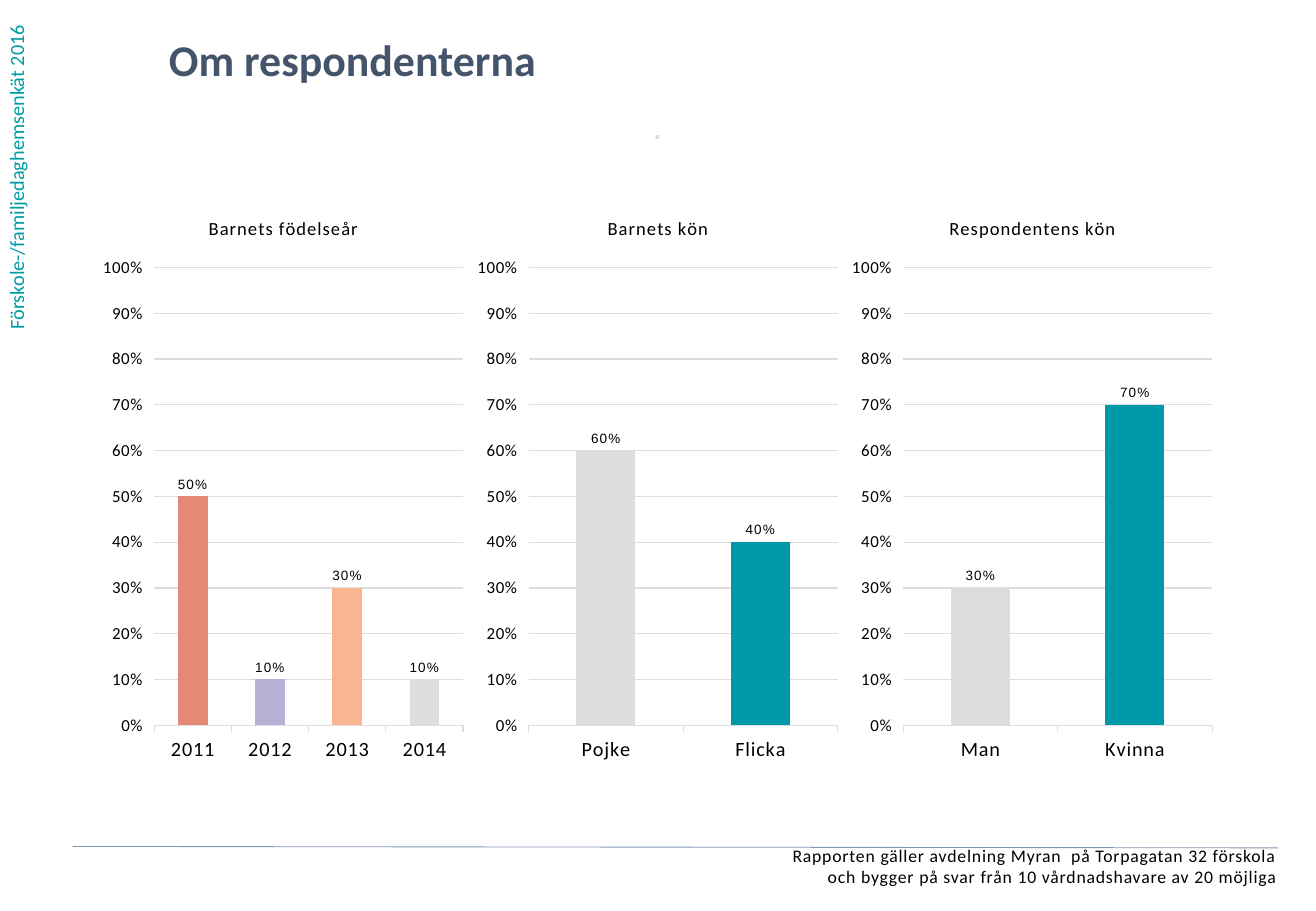
import pptx
import pptx.chart.data
import pptx.dml.color
import pptx.enum.chart
import pptx.enum.shapes
import pptx.enum.text
import pptx.oxml
import pptx.util
from lxml import etree

Cm = pptx.util.Cm
Pt = pptx.util.Pt
RGBColor = pptx.dml.color.RGBColor
Align = pptx.enum.text.PP_ALIGN

TEAL = RGBColor(0x00, 0x99, 0xAA)
SIDE_TEAL = RGBColor(0x00, 0x9B, 0xA4)
SLATE = RGBColor(0x44, 0x54, 0x6A)
RULE_BLUE = RGBColor(0x84, 0x97, 0xB0)
PALE_BLUE = RGBColor(0xD2, 0xD9, 0xE2)
GREY = RGBColor(0xDD, 0xDD, 0xDD)
PEACH = RGBColor(0xF9, 0xB5, 0x90)
LILAC = RGBColor(0xB6, 0xB1, 0xD4)
CORAL = RGBColor(0xE5, 0x89, 0x77)
BLACK = RGBColor(0, 0, 0)
FONT = "Calibri"
LETTER_SPACING = "50"  # hundredths of a point

# Content
TITLE = "Om respondenterna"
SIDE_LABEL = "Förskole-/familjedaghemsenkät 2016"
SEPARATOR = "⋅"
FOOTER = ("Rapporten gäller avdelning Myran  på Torpagatan 32 förskola\v"
          "och bygger på svar från 10 vårdnadshavare av 20 möjliga")
# Chart title, then category, share and colour; the axis runs right to left
CHARTS = [
    ("Barnets födelseår", [("2014", 0.1, GREY), ("2013", 0.3, PEACH),
                           ("2012", 0.1, LILAC), ("2011", 0.5, CORAL)]),
    ("Barnets kön", [("Flicka", 0.4, TEAL), ("Pojke", 0.6, GREY)]),
    ("Respondentens kön", [("Kvinna", 0.7, TEAL), ("Man", 0.3, GREY)]),
]
CHART_LEFT, CHART_TOP, CHART_WIDTH, CHART_HEIGHT = 2.01, 4.06, 7.83, 12.09
PLOT_AREA = {"x": 0.155, "y": 0.127, "w": 0.825, "h": 0.792}
PERCENT = "0%;0%"


def style_font(font, size, color, name=FONT, bold=False):
    font.size, font.name, font.bold = Pt(size), name, bold
    font.color.rgb = color


def fill_text(shape, text, size, color, bold=False, align=Align.LEFT,
              spaced=False, margins=(0, 0)):
    frame = shape.text_frame
    frame.word_wrap = True
    frame.auto_size = pptx.enum.text.MSO_AUTO_SIZE.NONE
    frame.vertical_anchor = pptx.enum.text.MSO_ANCHOR.TOP
    frame.margin_left = frame.margin_right = Cm(margins[0])
    frame.margin_top = frame.margin_bottom = Cm(margins[1])
    frame.text = text
    paragraph = frame.paragraphs[0]
    paragraph.alignment = align
    style_font(paragraph.font, size, color, bold=bold)
    if spaced:
        for run in paragraph.runs:
            run._r.get_or_add_rPr().set("spc", LETTER_SPACING)
    return frame


def add_text(slide, box, *args, **kwargs):
    shape = slide.shapes.add_textbox(*(Cm(length) for length in box))
    return fill_text(shape, *args, **kwargs)


def fix_plot_area(chart):
    qn = pptx.oxml.ns.qn
    plot_area = chart._chartSpace.chart.plotArea
    for old_layout in plot_area.findall(qn("c:layout")):
        plot_area.remove(old_layout)
    layout = etree.Element(qn("c:layout"))
    manual = etree.SubElement(layout, qn("c:manualLayout"))
    settings = {"layoutTarget": "inner", "xMode": "edge", "yMode": "edge", **PLOT_AREA}
    for tag, value in settings.items():
        etree.SubElement(manual, qn("c:" + tag)).set("val", str(value))
    plot_area.insert(0, layout)


def add_share_chart(slide, left, title, bars):
    data = pptx.chart.data.CategoryChartData(number_format=PERCENT)
    data.categories = [category for category, _, _ in bars]
    data.add_series("Series 1", [share for _, share, _ in bars])
    chart = slide.shapes.add_chart(
        pptx.enum.chart.XL_CHART_TYPE.COLUMN_CLUSTERED,
        Cm(left), Cm(CHART_TOP), Cm(CHART_WIDTH), Cm(CHART_HEIGHT), data).chart
    chart.has_legend = False
    style_font(chart.font, 10, BLACK)
    chart.has_title = True
    chart.chart_title.include_in_layout = False
    title_frame = chart.chart_title.text_frame
    title_frame.text = title
    style_font(title_frame.paragraphs[0].font, 11, BLACK)
    title_frame.paragraphs[0].runs[0]._r.get_or_add_rPr().set("spc", LETTER_SPACING)

    # Axes; the high end of the reversed category axis is on the left
    category_axis, value_axis = chart.category_axis, chart.value_axis
    category_axis.reverse_order = True
    value_axis.tick_label_position = pptx.enum.chart.XL_TICK_LABEL_POSITION.HIGH
    style_font(category_axis.tick_labels.font, 12, BLACK)
    style_font(value_axis.tick_labels.font, 10, BLACK)
    value_axis.minimum_scale, value_axis.maximum_scale = 0, 1
    value_axis.major_unit = 0.1
    value_axis.tick_labels.number_format = PERCENT
    value_axis.tick_labels.number_format_is_linked = False
    value_axis.format.line.fill.background()
    for line in (category_axis.format.line, value_axis.major_gridlines.format.line):
        line.color.rgb, line.width = GREY, Pt(0.75)

    # Bars and labels
    plot = chart.plots[0]
    plot.gap_width = 162
    plot.vary_by_categories = False
    series = plot.series[0]
    series.format.fill.solid()
    series.format.fill.fore_color.rgb = TEAL
    for index, (_, _, color) in enumerate(bars):
        fill = series.points[index].format.fill
        fill.solid()
        fill.fore_color.rgb = color
    labels = series.data_labels
    labels.show_value = True
    labels.number_format, labels.number_format_is_linked = PERCENT, False
    labels.position = pptx.enum.chart.XL_LABEL_POSITION.OUTSIDE_END
    style_font(labels.font, 8, BLACK, name="Arial")

    for properties in chart._chartSpace.iter(pptx.oxml.ns.qn("a:defRPr")):
        properties.set("spc", LETTER_SPACING)
    fix_plot_area(chart)


def main():
    presentation = pptx.Presentation()
    presentation.slide_width, presentation.slide_height = Cm(27.51), Cm(19.05)
    slide = presentation.slides.add_slide(presentation.slide_layouts[5])

    # Title and side label
    title = slide.shapes.title
    title.left, title.top, title.width, title.height = Cm(3.53), Cm(0.69), Cm(21.18), Cm(1.45)
    fill_text(title, TITLE, 26, SLATE, bold=True)
    side = add_text(slide, (-0.05, 0, 1.02, 7.14), SIDE_LABEL, 12, SIDE_TEAL,
                    margins=(0.13, 0.25))
    side._txBody.bodyPr.set("vert", "vert270")

    # Separator and footer
    add_text(slide, (9.83, 2.59, 7.83, 0.99), SEPARATOR, 12, PALE_BLUE,
             bold=True, align=Align.CENTER, spaced=True)
    add_text(slide, (0.3, 17.66, 26.4, 1.09), FOOTER, 10.5, BLACK,
             align=Align.RIGHT, spaced=True)

    # Charts side by side
    for column, (chart_title, bars) in enumerate(CHARTS):
        add_share_chart(slide, CHART_LEFT + column * CHART_WIDTH, chart_title, bars)

    # Footer rule
    rule = slide.shapes.add_connector(pptx.enum.shapes.MSO_CONNECTOR.STRAIGHT,
                                      Cm(1.52), Cm(17.7), Cm(26.72), Cm(17.73))
    rule.line.color.rgb, rule.line.width = RULE_BLUE, Pt(0.5)
    etree.SubElement(rule._element.spPr, pptx.oxml.ns.qn("a:effectLst"))

    presentation.save("out.pptx")


if __name__ == "__main__":
    main()
